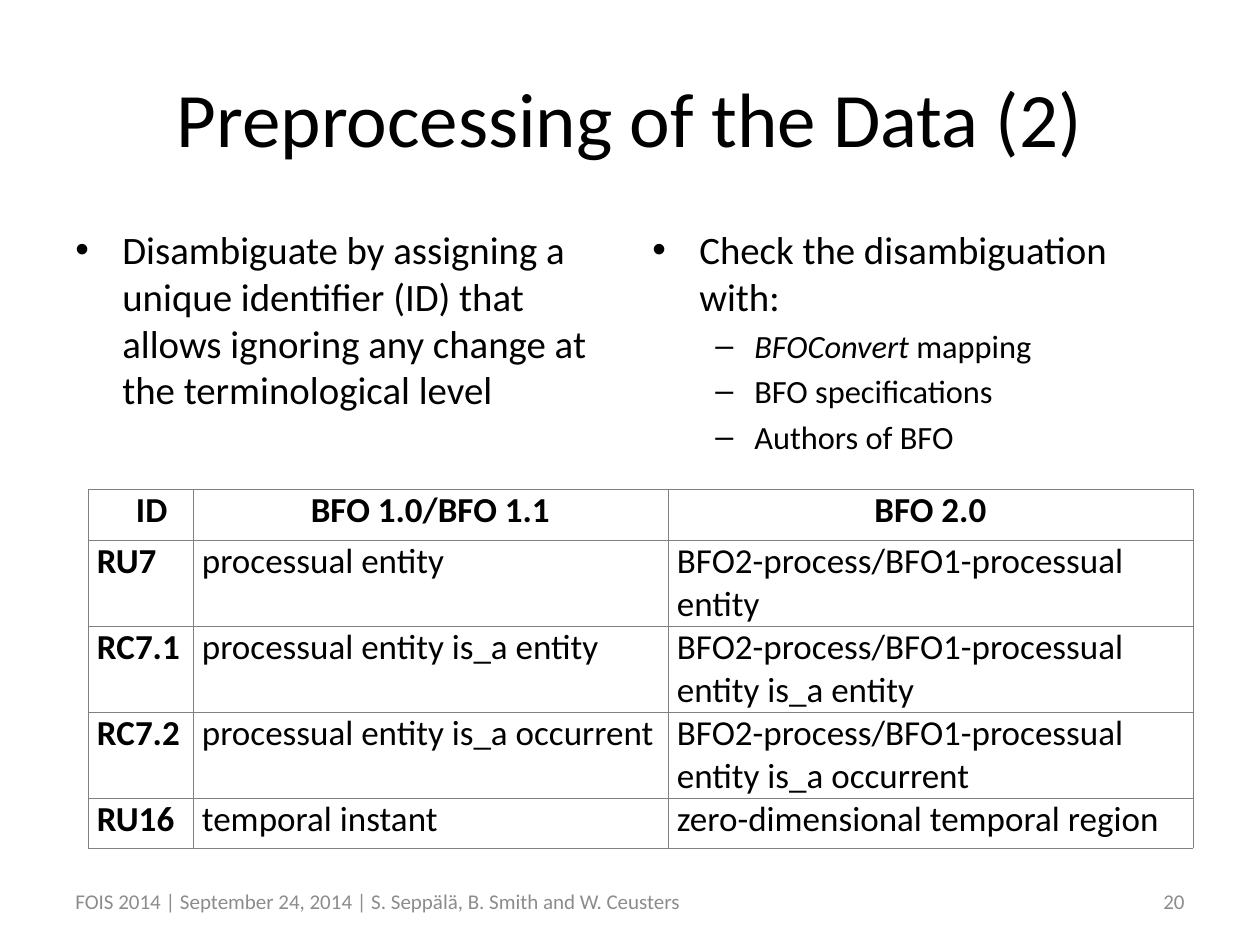
from dataclasses import dataclass

from lxml.etree import SubElement
from pptx import Presentation
from pptx.dml.color import RGBColor
from pptx.enum.text import MSO_ANCHOR, PP_ALIGN
from pptx.oxml.ns import qn
from pptx.util import Emu, Pt

EMU_PER_INCH = 914400
PX_PER_INCH = 126
COLORS = {"text": "000000", "footer": "8C8C8C", "border": "808080"}
FONT = "Calibri"


@dataclass(frozen=True)
class Box:
    x: int
    y: int
    w: int
    h: int


@dataclass(frozen=True)
class Level:
    bullet: str
    size: float
    margin: int
    hanging: int


@dataclass(frozen=True)
class Bullet:
    text: str
    level: int = 0
    lead: str = ""


@dataclass(frozen=True)
class Footer:
    box: Box
    text: str
    align: PP_ALIGN


LEVELS = [Level("•", 22.2, 47, 47), Level("–", 18.5, 102, 39)]
TITLE_BOX = Box(63, 38, 1134, 157)
COLUMNS = [
    (Box(63, 220, 557, 280), [
        Bullet("Disambiguate by assigning a unique identifier (ID) that "
               "allows ignoring any change at the terminological level"),
    ]),
    (Box(640, 220, 557, 237), [
        Bullet("Check the disambiguation with:"),
        Bullet(" mapping", 1, "BFOConvert"),
        Bullet("BFO specifications", 1),
        Bullet("Authors of BFO", 1),
    ]),
]
FOOTERS = [
    Footer(Box(903, 876, 294, 50), "20", PP_ALIGN.RIGHT),
    Footer(Box(63, 876, 840, 50),
           "FOIS 2014 | September 24, 2014 | S. Seppälä, B. Smith and W. Ceusters",
           PP_ALIGN.LEFT),
]
TABLE_BOX = Box(88, 489, 1105, 359)
COL_WIDTHS = [105, 475, 525]
ROW_HEIGHTS = [51, 86, 86, 86, 50]
ROWS = [
    ("ID", "BFO 1.0/BFO 1.1", "BFO 2.0"),
    ("RU7", "processual entity", "BFO2-process/BFO1-processual entity"),
    ("RC7.1", "processual entity is_a entity",
     "BFO2-process/BFO1-processual entity is_a entity"),
    ("RC7.2", "processual entity is_a occurrent",
     "BFO2-process/BFO1-processual entity is_a occurrent"),
    ("RU16", "temporal instant", "zero-dimensional temporal region"),
]


def px(n: int) -> Emu:
    return Emu(round(n * EMU_PER_INCH / PX_PER_INCH))


def bounds(box: Box) -> list[Emu]:
    return [px(n) for n in (box.x, box.y, box.w, box.h)]


def set_attrs(obj, values: dict) -> None:
    for name, value in values.items():
        setattr(obj, name, value)


def add_run(p, text: str, size: float, color: str = "text", **formats) -> None:
    r = p.add_run()
    r.text = text
    set_attrs(r.font, {"name": FONT, "size": Pt(size), **formats})
    r.font.color.rgb = RGBColor.from_string(COLORS[color])


def add_title(s, text: str) -> None:
    sp = s.shapes.title
    set_attrs(sp, dict(zip(("left", "top", "width", "height"), bounds(TITLE_BOX))))
    tf = sp.text_frame
    tf.vertical_anchor = MSO_ANCHOR.MIDDLE
    p = tf.paragraphs[0]
    p.alignment = PP_ALIGN.CENTER
    add_run(p, text, 44)


def add_text_frame(s, box: Box, anchor: MSO_ANCHOR):
    tf = s.shapes.add_textbox(*bounds(box)).text_frame
    set_attrs(tf, {"word_wrap": True, "vertical_anchor": anchor})
    return tf


def add_bullets(s, box: Box, bullets: list[Bullet]) -> None:
    tf = add_text_frame(s, box, MSO_ANCHOR.TOP)
    for i, bullet in enumerate(bullets):
        p = tf.add_paragraph() if i else tf.paragraphs[0]
        level = LEVELS[bullet.level]
        set_attrs(p, {"level": bullet.level, "space_before": Pt(level.size * 0.2)})
        pPr = p._p.get_or_add_pPr()
        pPr.set("marL", str(px(level.margin)))
        pPr.set("indent", str(px(-level.hanging)))
        SubElement(pPr, qn("a:buFont"), typeface="Arial")
        SubElement(pPr, qn("a:buChar"), char=level.bullet)
        if bullet.lead:
            add_run(p, bullet.lead, level.size, italic=True)
        add_run(p, bullet.text, level.size)


def add_footer(s, footer: Footer) -> None:
    p = add_text_frame(s, footer.box, MSO_ANCHOR.MIDDLE).paragraphs[0]
    p.alignment = footer.align
    add_run(p, footer.text, 12, "footer")


def set_borders(cell) -> None:
    tcPr = cell._tc.get_or_add_tcPr()
    for i, side in enumerate(("lnL", "lnR", "lnT", "lnB")):
        ln = tcPr.makeelement(qn(f"a:{side}"), {"w": str(Pt(0.25))})
        fill = SubElement(ln, qn("a:solidFill"))
        SubElement(fill, qn("a:srgbClr"), val=COLORS["border"])
        tcPr.insert(i, ln)


def fill_cell(cell, text: str, row: int, col: int) -> None:
    set_attrs(cell, {"margin_left": px(9), "margin_right": px(9),
                     "margin_top": 0, "margin_bottom": 0})
    cell.fill.background()
    set_borders(cell)
    p = cell.text_frame.paragraphs[0]
    if row == 0 and col == 0:
        p._p.get_or_add_pPr().set("indent", str(px(39)))
    elif row == 0:
        p.alignment = PP_ALIGN.CENTER
    add_run(p, text, 20, bold=row == 0 or col == 0)


def add_mapping_table(s) -> None:
    table = s.shapes.add_table(len(ROWS), len(COL_WIDTHS), *bounds(TABLE_BOX)).table
    set_attrs(table, {"first_row": False, "horz_banding": False})
    for column, width in zip(table.columns, COL_WIDTHS):
        column.width = px(width)
    for i, (row, height) in enumerate(zip(table.rows, ROW_HEIGHTS)):
        row.height = px(height)
        for j, text in enumerate(ROWS[i]):
            fill_cell(row.cells[j], text, i, j)


def main() -> None:
    prs = Presentation()
    set_attrs(prs, {"slide_width": px(1260), "slide_height": px(945)})
    s = prs.slides.add_slide(prs.slide_layouts.get_by_name("Title Only"))
    add_title(s, "Preprocessing of the Data (2)")
    for box, bullets in COLUMNS:
        add_bullets(s, box, bullets)
    for footer in FOOTERS:
        add_footer(s, footer)
    add_mapping_table(s)
    prs.save("out.pptx")


if __name__ == "__main__":
    main()
